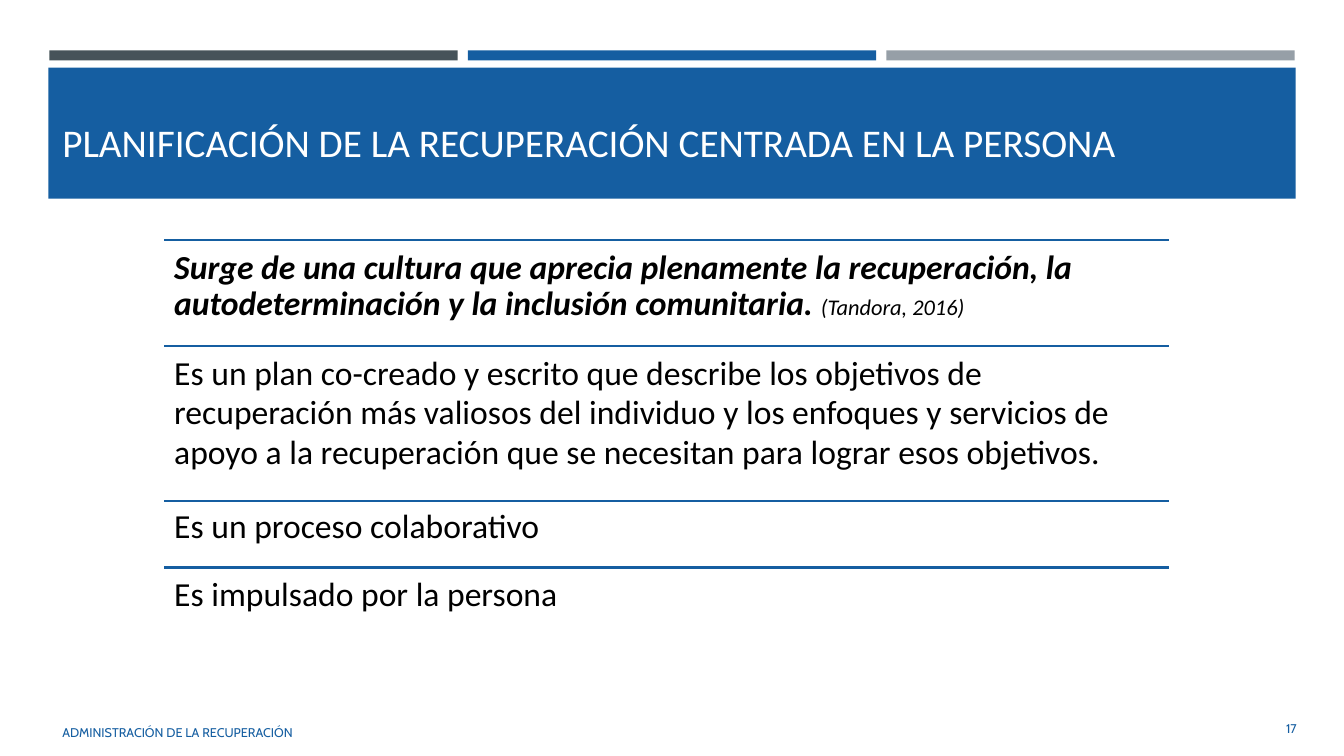
from dataclasses import dataclass

from lxml.etree import SubElement
from pptx import Presentation
from pptx.dml.color import RGBColor
from pptx.enum.shapes import MSO_CONNECTOR as Connector, MSO_SHAPE as Shape
from pptx.enum.text import MSO_ANCHOR as Anchor, PP_ALIGN as Align
from pptx.oxml.ns import qn
from pptx.util import Inches, Pt


@dataclass(frozen=True)
class Theme:
    """Colours, fonts and type sizes of the slide."""
    blue: str = "155EA1"
    slate: str = "465359"
    grey: str = "969FA7"
    white: str = "FFFFFF"
    black: str = "000000"
    heading_font: str = "Calibri"
    footer_font: str = "Cabin"
    title_size: int = 28
    body_size: int = 24
    citation_size: int = 16
    footer_size: int = 9
    rule_width: float = 1.75


THEME = Theme()


@dataclass(frozen=True)
class Span:
    """A stretch of text in one style."""
    text: str
    size: int = THEME.body_size
    color: str = THEME.black
    font: str = THEME.heading_font
    bold: bool = False
    italic: bool = False


def add_block(slide, left, top, width, height, color):
    """Draw a plain filled rectangle."""
    shape = slide.shapes.add_shape(
        Shape.RECTANGLE, Inches(left), Inches(top), Inches(width), Inches(height))
    shape.shadow.inherit = False
    shape.fill.solid()
    shape.fill.fore_color.rgb = RGBColor.from_string(color)
    shape.line.fill.background()


def add_rule(slide, left, right, top):
    """Draw a horizontal dividing line."""
    rule = slide.shapes.add_connector(
        Connector.STRAIGHT, Inches(left), Inches(top), Inches(right), Inches(top))
    rule.line.color.rgb = RGBColor.from_string(THEME.blue)
    rule.line.width = Pt(THEME.rule_width)
    SubElement(rule._element.spPr, qn("a:effectLst"))


def add_text(slide, left, top, width, height, spans, anchor=Anchor.MIDDLE,
             align=Align.LEFT, spacing=1.0, inset=0.05):
    """Add a wrapped one-paragraph text box made of spans."""
    box = slide.shapes.add_textbox(
        Inches(left), Inches(top), Inches(width), Inches(height))
    frame = box.text_frame
    frame.word_wrap = True
    frame.vertical_anchor = anchor
    frame.margin_left = frame.margin_right = Inches(0.1)
    frame.margin_top = frame.margin_bottom = Inches(inset)
    paragraph = frame.paragraphs[0]
    paragraph.alignment = align
    paragraph.line_spacing = spacing
    for span in spans:
        run = paragraph.add_run()
        run.text = span.text
        run.font.name = span.font
        run.font.size = Pt(span.size)
        run.font.bold = span.bold
        run.font.italic = span.italic
        run.font.color.rgb = RGBColor.from_string(span.color)


def add_header(slide):
    """Draw the three accent bars and the title band."""
    for index, color in enumerate((THEME.slate, THEME.blue, THEME.grey)):
        add_block(slide, 0.49 + index * 4.15, 0.5, 4.05, 0.1, color)
    add_block(slide, 0.48, 0.67, 12.37, 1.3, THEME.blue)
    title = Span("PLANIFICACIÓN DE LA RECUPERACIÓN CENTRADA EN LA PERSONA",
                 THEME.title_size, THEME.white)
    add_text(slide, 0.52, 0.89, 12.3, 1.04, [title])


def add_statements(slide):
    """Add the statements, each under its dividing line."""
    statements = [
        (2.38, 2.38, 0.99, 0.9, [
            Span("Surge de una cultura que aprecia plenamente la recuperación, la "
                 "autodeterminación y la inclusión comunitaria. ",
                 bold=True, italic=True),
            Span("(Tandora, 2016)", THEME.citation_size, italic=True)]),
        (3.43, 3.41, 1.5, 0.98, [
            Span("Es un plan co-creado y escrito que describe los objetivos de "
                 "recuperación más valiosos del individuo y los enfoques y servicios "
                 "de apoyo a la recuperación que se necesitan para lograr esos "
                 "objetivos.")]),
        (4.97, 4.93, 0.65, 0.98, [Span("Es un proceso colaborativo")]),
        (5.63, 5.6, 0.65, 0.98, [Span("Es impulsado por la persona")]),
    ]
    for rule_top, text_top, height, spacing, spans in statements:
        add_rule(slide, 1.63, 11.59, rule_top)
        add_text(slide, 1.63, text_top, 9.97, height, spans,
                 Anchor.TOP, spacing=spacing, inset=0.1)


def add_footer(slide):
    """Add the footer text and the slide number."""
    for text, left, top, width, align in (
            ("ADMINISTRACIÓN DE LA RECUPERACIÓN", 0.52, 7.07, 7.46, Align.LEFT),
            ("17", 11.81, 7.03, 1.15, Align.RIGHT)):
        span = Span(text, THEME.footer_size, THEME.blue, THEME.footer_font)
        add_text(slide, left, top, width, 0.4, [span], align=align)


def main():
    """Build and save the slide."""
    presentation = Presentation()
    presentation.slide_width = Inches(13.33)
    presentation.slide_height = Inches(7.5)
    slide = presentation.slides.add_slide(presentation.slide_layouts[6])
    add_header(slide)
    add_statements(slide)
    add_footer(slide)
    presentation.save("out.pptx")


if __name__ == "__main__":
    main()
